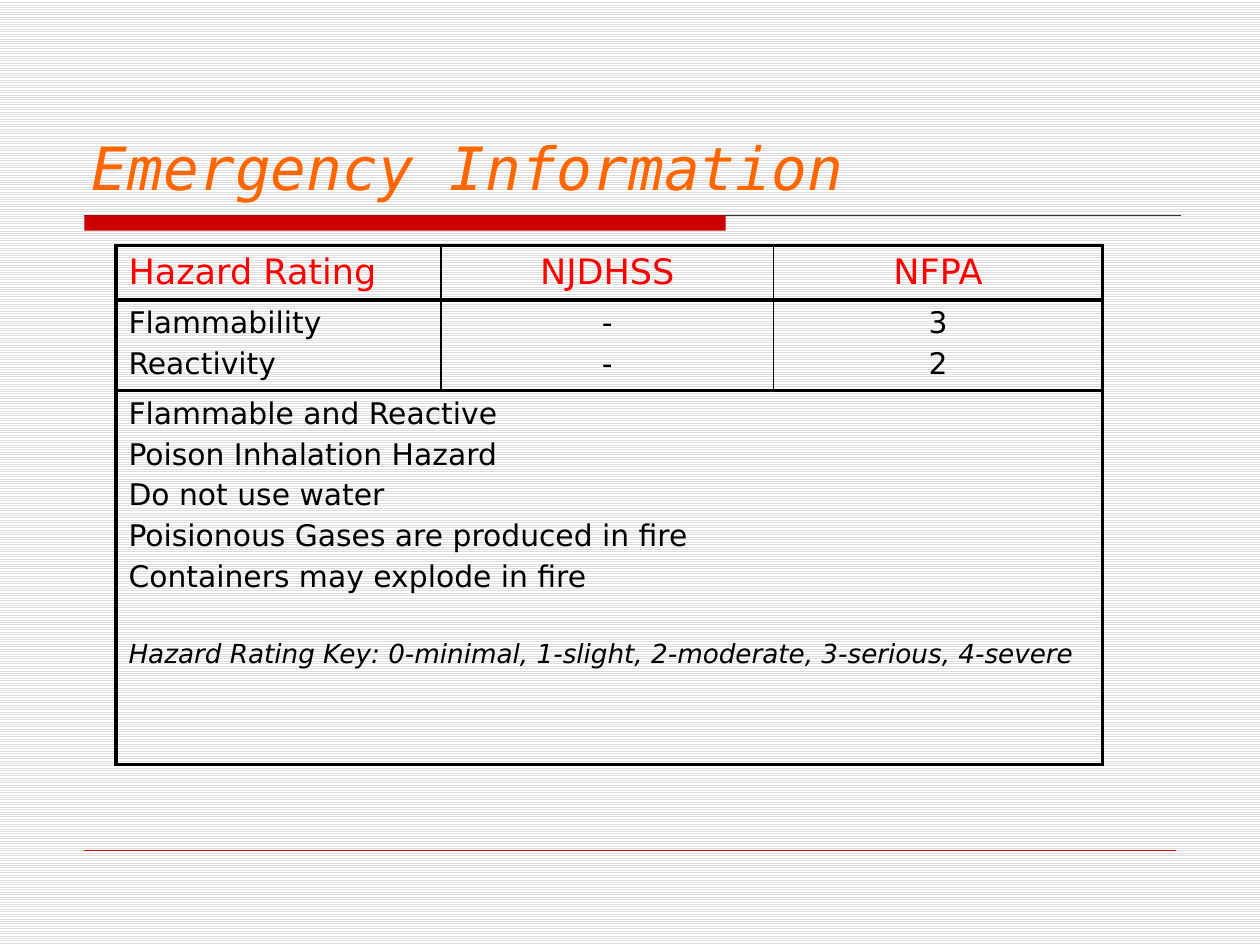
from lxml import etree
from pptx import Presentation
from pptx import util as u
from pptx.dml.color import RGBColor
from pptx.enum import dml, shapes, text
from pptx.oxml import ns

PX = 9144  # one px is a hundredth of an inch

RED, BLACK = "CC0000", "000000"
THIN, THICK = 1, 2.25


def rgb(value):
    return RGBColor.from_string(value)


class SlideBuilder:
    """Holds the style and the current slide."""

    font, title_font = "DejaVu Sans", "DejaVu Sans Mono"

    def __init__(self, deck):
        self.slide = deck.slides.add_slide(deck.slide_layouts[5])

    def place(self, left, top, width, height):
        return [u.Emu(value * PX) for value in (left, top, width, height)]

    def background(self, front, back):
        fill = self.slide.background.fill
        fill.patterned()
        fill.pattern = dml.MSO_PATTERN.LIGHT_HORIZONTAL
        fill.fore_color.rgb, fill.back_color.rgb = rgb(front), rgb(back)

    def span(self, para, words, size, color, font=None, italic=False):
        span = para.add_run()
        span.text = words
        span.font.name = font or self.font
        span.font.size = u.Pt(size)
        span.font.italic = italic
        span.font.color.rgb = rgb(color)

    def title(self, words, area):
        box = self.slide.shapes.title
        box.left, box.top, box.width, box.height = self.place(*area)
        frame = box.text_frame
        frame.auto_size = text.MSO_AUTO_SIZE.NONE
        frame.vertical_anchor = text.MSO_ANCHOR.BOTTOM
        para = frame.paragraphs[0]
        para.alignment = text.PP_ALIGN.LEFT
        self.span(para, words, 34, "FF6600", self.title_font, italic=True)

    def bar(self, area, color):
        bar = self.slide.shapes.add_shape(
            shapes.MSO_SHAPE.RECTANGLE, *self.place(*area))
        bar.shadow.inherit = False
        bar.fill.solid()
        bar.fill.fore_color.rgb = rgb(color)
        bar.line.fill.background()

    def rule(self, left, right, top, color, weight):
        line = self.slide.shapes.add_connector(
            shapes.MSO_CONNECTOR.STRAIGHT, *self.place(left, top, right, top))
        line.line.color.rgb = rgb(color)
        line.line.width = u.Pt(weight)
        etree.SubElement(line._element.spPr, ns.qn("a:effectLst"))

    def table(self, area, widths, heights):
        frame = self.slide.shapes.add_table(
            len(heights), len(widths), *self.place(*area))
        grid = frame.table
        grid.first_row = grid.horz_banding = False
        for column, width in zip(grid.columns, widths):
            column.width = u.Emu(width * PX)
        for row, height in zip(grid.rows, heights):
            row.height = u.Emu(height * PX)
        return grid

    def cell(self, cell, lines, centered):
        """Each line is (words, size, color, italic, space before)."""
        for index, (words, size, color, italic, gap) in enumerate(lines):
            frame = cell.text_frame
            para = frame.add_paragraph() if index else frame.paragraphs[0]
            para.space_before = u.Pt(gap if index else 0)
            if centered:
                para.alignment = text.PP_ALIGN.CENTER
            self.span(para, words, size, color, italic=italic)

    def borders(self, cell, left, right):
        props = cell._tc.get_or_add_tcPr()
        for side, weight in zip("LRTB", (left, right, THICK, THICK)):
            line = etree.SubElement(props, ns.qn(f"a:ln{side}"), w=str(u.Pt(weight)))
            fill = etree.SubElement(line, ns.qn("a:solidFill"))
            etree.SubElement(fill, ns.qn("a:srgbClr"), val=BLACK)
        cell.fill.background()


def heading(words):
    return [(words, 20, "FF0000", False, 0)]


def body(*lines):
    return [(words, 17, BLACK, False, 3.4) for words in lines]


def main():
    deck = Presentation()
    deck.slide_width, deck.slide_height = u.Emu(1000 * PX), u.Emu(750 * PX)
    page = SlideBuilder(deck)
    page.background("DDDDDD", "FFFFFF")

    # Title with its bar and rule, and the footer rule
    page.rule(67, 937, 171, "333333", 0.75)
    page.bar((67, 171, 509, 12), RED)
    page.rule(67, 933, 675, RED, 0.25)
    page.title("Emergency Information", (63, 33, 875, 133))

    # Hazard table; the last row spans all columns
    key = ("Hazard Rating Key: 0-minimal, 1-slight, 2-moderate, 3-serious, 4-severe",
           15, BLACK, True, 26)
    notes = body("Flammable and Reactive", "Poison Inhalation Hazard",
                 "Do not use water", "Poisionous Gases are produced in fire",
                 "Containers may explode in fire") + [key]
    rows = [
        [heading("Hazard Rating"), heading("NJDHSS"), heading("NFPA")],
        [body("Flammability", "Reactivity"), body("-", "-"), body("3", "2")],
        [notes],
    ]
    widths, heights = (258, 264, 261), (43, 72, 297)
    grid = page.table((92, 195, sum(widths), sum(heights)), widths, heights)
    last = len(widths) - 1
    grid.cell(2, 0).merge(grid.cell(2, last))
    for r, row in enumerate(rows):
        for c, lines in enumerate(row):
            page.cell(grid.cell(r, c), lines, centered=c > 0)
        for c in range(len(widths)):
            whole = len(row) == 1
            page.borders(grid.cell(r, c),
                         THICK if whole or c == 0 else THIN,
                         THICK if whole or c == last else THIN)

    deck.save("out.pptx")


if __name__ == "__main__":
    main()
